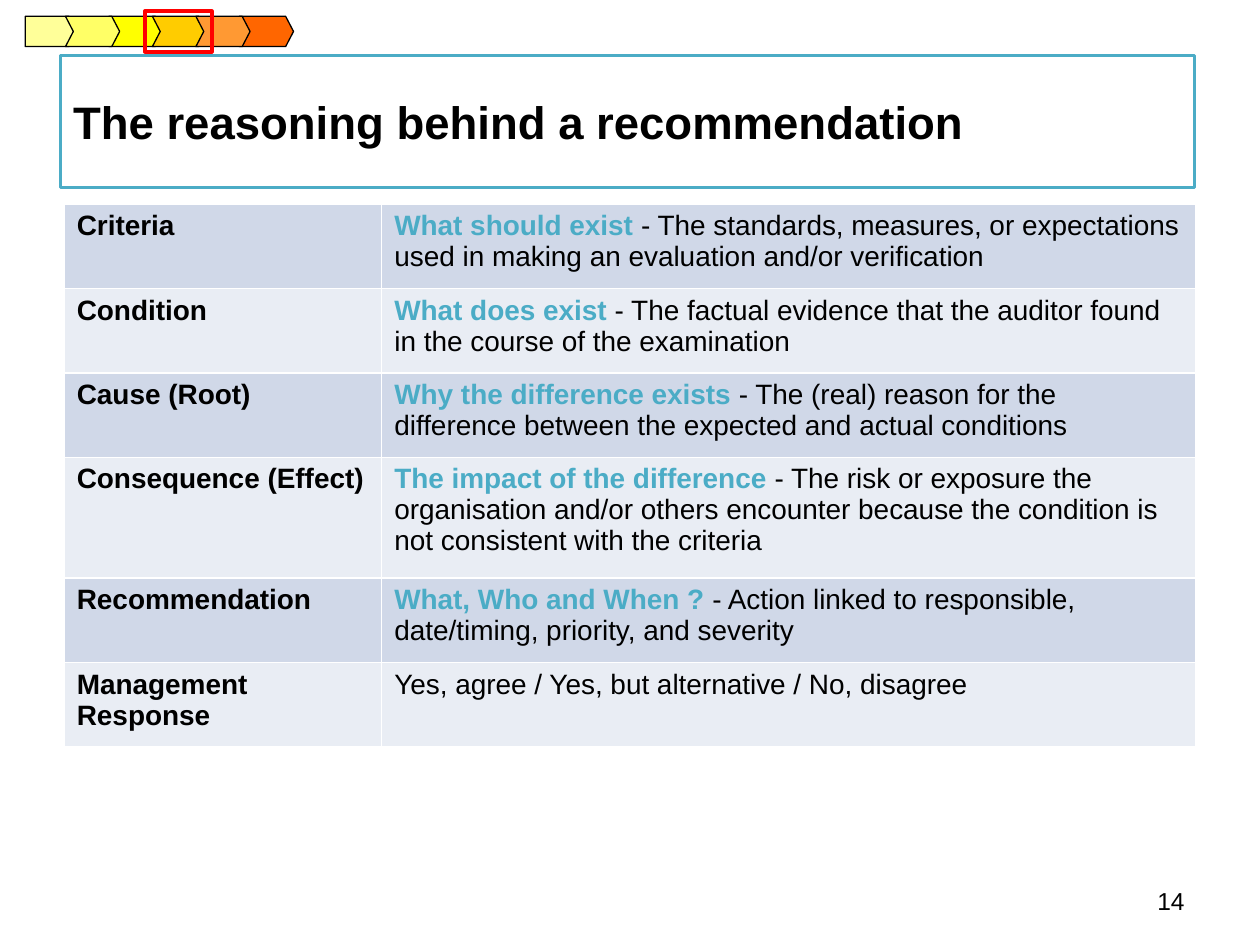
from lxml import etree
from pptx import Presentation
from pptx.dml.color import RGBColor
from pptx.enum import shapes, text
from pptx.oxml.ns import qn
from pptx.util import Inches, Pt

TEAL = "4BACC6"
BLACK = "000000"
BANDS = ["D0D8E8", "E9EDF4"]


def color(value):
    return RGBColor.from_string(value)


def style_span(span, size, bold=False, ink=BLACK):
    span.font.name = "Arial"
    span.font.size = Pt(size)
    span.font.bold = bold
    span.font.color.rgb = color(ink)


deck = Presentation()
deck.slide_width, deck.slide_height = Inches(10), Inches(7.5)
page = deck.slides.add_slide(deck.slide_layouts[5])

# Title
title = page.shapes.title
title.left, title.top = Inches(0.48), Inches(0.44)
title.width, title.height = Inches(9), Inches(1.05)
title.fill.solid()
title.fill.fore_color.rgb = color("FFFFFF")
title.line.color.rgb = color(TEAL)
title.line.width = Pt(2)
title.text_frame.text = "The reasoning behind a recommendation"
title.text_frame.vertical_anchor = text.MSO_ANCHOR.MIDDLE
heading = title.text_frame.paragraphs[0]
heading.alignment = text.PP_ALIGN.LEFT
style_span(heading.runs[0], 26, bold=True)

# Page number
number_box = page.shapes.add_textbox(Inches(7.17), Inches(6.95), Inches(2.33), Inches(0.4))
number_box.text_frame.word_wrap = True
number_box.text_frame.vertical_anchor = text.MSO_ANCHOR.MIDDLE
number_box.text_frame.text = "14"
number = number_box.text_frame.paragraphs[0]
number.alignment = text.PP_ALIGN.RIGHT
style_span(number.runs[0], 14)

# Table: label, highlighted lead, explanation
rows = [
    ("Criteria", "What should exist ",
     "- The standards, measures, or expectations used in making an evaluation and/or verification"),
    ("Condition", "What does exist ",
     "- The factual evidence that the auditor found in the course of the examination"),
    ("Cause (Root)", "Why the difference exists ",
     "- The (real) reason for the difference between the expected and actual conditions"),
    ("Consequence (Effect)", "The impact of the difference ",
     "- The risk or exposure the organisation and/or others encounter because the condition "
     "is not consistent with the criteria"),
    ("Recommendation", "What, Who and When ? ",
     "- Action linked to responsible, date/timing, priority, and severity"),
    ("Management Response", "", "Yes, agree / Yes, but alternative / No, disagree"),
]
row_heights = [0.67, 0.67, 0.67, 0.96, 0.67, 0.67]
table = page.shapes.add_table(len(rows), 2, Inches(0.51), Inches(1.62),
                              Inches(8.98), Inches(sum(row_heights))).table
table.first_row = False
table.columns[0].width = Inches(2.52)
table.columns[1].width = Inches(6.46)

for index, (label, lead, explanation) in enumerate(rows):
    table.rows[index].height = Inches(row_heights[index])
    contents = [[(label, True, BLACK)], [(lead, True, TEAL), (explanation, False, BLACK)]]
    for cell, pieces in zip(table.rows[index].cells, contents):
        para = cell.text_frame.paragraphs[0]
        for words, bold, ink in pieces:
            if words:
                span = para.add_run()
                span.text = words
                style_span(span, 16, bold, ink)
        properties = cell._tc.get_or_add_tcPr()
        for side in ("a:lnL", "a:lnR", "a:lnT", "a:lnB"):
            border = etree.SubElement(properties, qn(side), w=str(Pt(1)))
            border_fill = etree.SubElement(border, qn("a:solidFill"))
            etree.SubElement(border_fill, qn("a:srgbClr"), val="FFFFFF")
        cell.fill.solid()
        cell.fill.fore_color.rgb = color(BANDS[index % 2])

# Progress tracker: steps in stacking order, by position along the track
tracker = page.shapes.add_group_shape()
step_fills = ["FFFF99", "FFFF66", "FFFF00", "FFCC00", "FF9933", "FF6600"]
for position in (0, 2, 3, 5, 4, 1):
    if position == 0:
        kind, left, width = shapes.MSO_SHAPE.PENTAGON, 0.2, 0.41
    else:
        kind, left, width = shapes.MSO_SHAPE.CHEVRON, 0.52 + 0.345 * (position - 1), 0.43
    step = tracker.shapes.add_shape(kind, Inches(left), Inches(0.13), Inches(width), Inches(0.24))
    step.shadow.inherit = False
    step.adjustments[0] = 0.26
    step.fill.solid()
    step.fill.fore_color.rgb = color(step_fills[position])
    step.line.color.rgb = color(BLACK)
    step.line.width = Pt(0.75)

marker = tracker.shapes.add_shape(shapes.MSO_SHAPE.RECTANGLE, Inches(1.15), Inches(0.09),
                                  Inches(0.53), Inches(0.32))
marker.shadow.inherit = False
marker.fill.background()
marker.line.color.rgb = color("FF0000")
marker.line.width = Pt(2.25)

deck.save("out.pptx")
